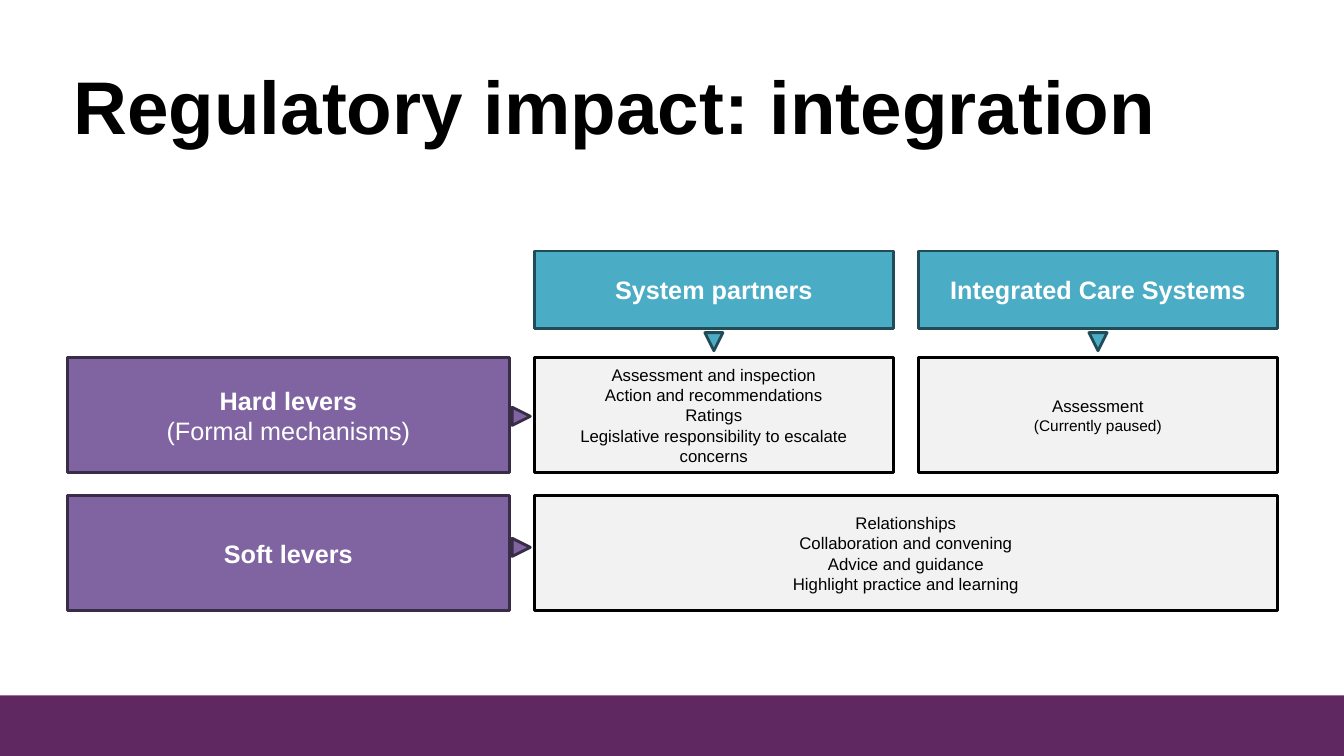
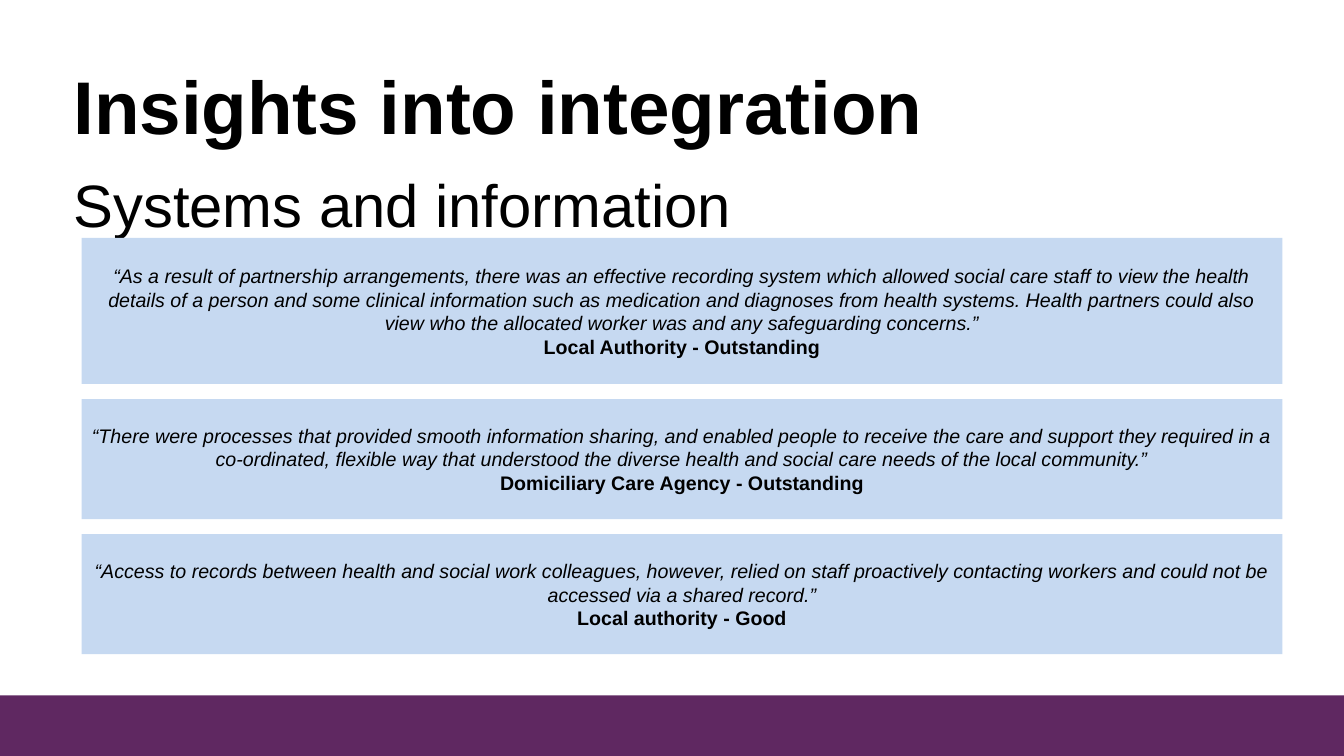
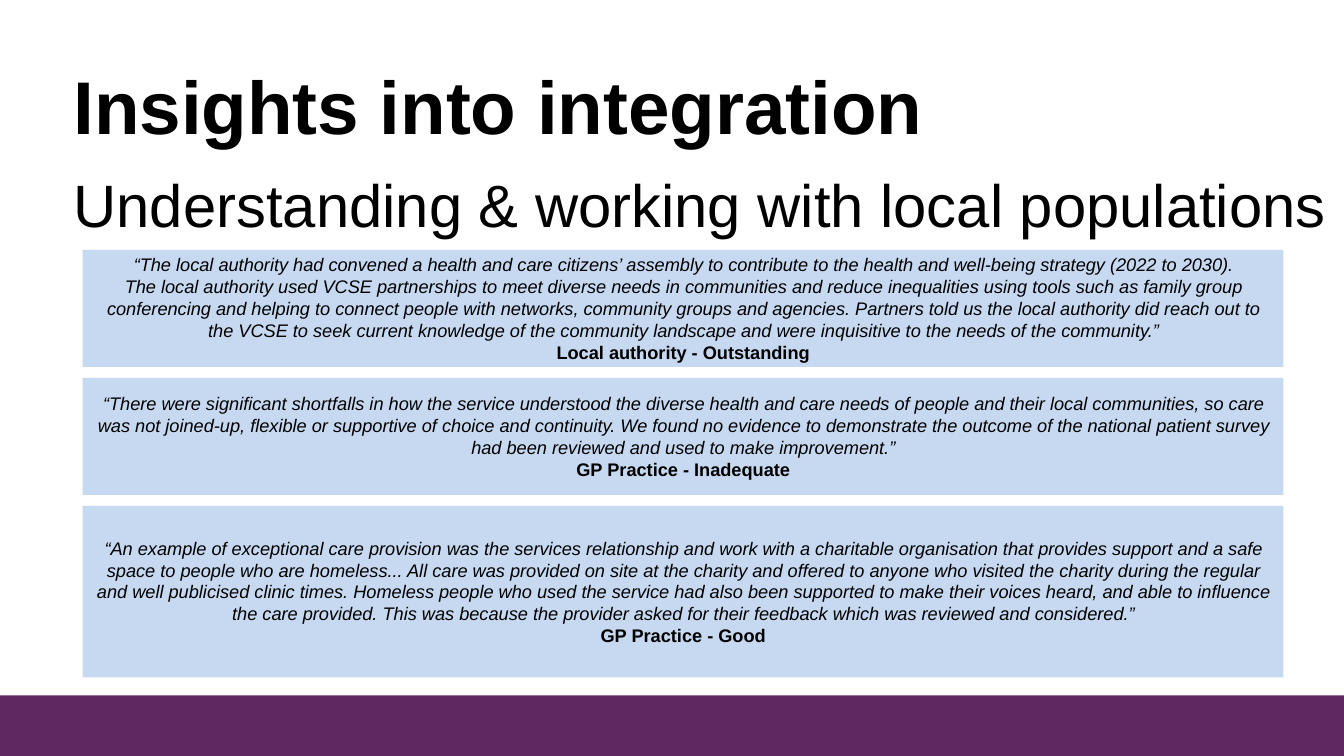
"""Build three slides on regulatory impact and insights into integration."""
from pptx import Presentation
from pptx.dml.color import RGBColor
from pptx.enum.shapes import MSO_SHAPE as Preset
from pptx.enum.text import MSO_ANCHOR as Anchor, PP_ALIGN as Align
from pptx.util import Inches, Pt

color = RGBColor.from_string
BAND, QUOTE, CELL = "5F2861", "C6D9F1", "F2F2F2"
PURPLE, PURPLE_LINE = "8064A2", "382C47"
TEAL, TEAL_LINE = "4BACC6", "214B57"
BLACK, WHITE = "000000", "FFFFFF"


def add_box(slide, left, top, width, height, fill, line=None, preset=Preset.RECTANGLE):
    shape = slide.shapes.add_shape(
        preset, Inches(left), Inches(top), Inches(width), Inches(height))
    shape.shadow.inherit = False
    shape.fill.solid()
    shape.fill.fore_color.rgb = color(fill)
    if line:
        shape.line.color.rgb = color(line)
        shape.line.width = Pt(2)
    else:
        shape.line.fill.background()
    shape.text_frame.word_wrap = True
    shape.text_frame.vertical_anchor = Anchor.MIDDLE
    return shape


def write(shape, text, size, ink=BLACK, bold=False, italic=False, align=Align.CENTER):
    frame = shape.text_frame
    for line in text.split("\n"):
        paragraph = frame.add_paragraph() if frame.text else frame.paragraphs[0]
        paragraph.alignment = align
        run = paragraph.add_run()
        run.text = line
        run.font.name = "Arial"
        run.font.size = Pt(size)
        run.font.bold = bold
        run.font.italic = italic
        run.font.color.rgb = color(ink)


presentation = Presentation()
presentation.slide_width = Inches(13.33)
presentation.slide_height = Inches(7.5)

headings = [
    ("Regulatory impact: integration", None),
    ("Insights into integration", "Systems and information"),
    ("Insights into integration", "Understanding & working with local populations"),
]
for title, subtitle in headings:
    slide = presentation.slides.add_slide(presentation.slide_layouts[6])
    add_box(slide, 0, 6.9, 13.33, 0.6, BAND)
    for text, top, height, size, bold in [(title, 0.59, 0.9, 53.3, True),
                                          (subtitle, 1.66, 0.7, 42.7, False)]:
        if text:
            heading = slide.shapes.add_textbox(
                Inches(0.73), Inches(top), Inches(12.6), Inches(height))
            frame = heading.text_frame
            frame.word_wrap = True
            frame.margin_left = frame.margin_right = 0
            frame.margin_top = frame.margin_bottom = 0
            write(heading, text, size, bold=bold, align=Align.LEFT)

impact_slide, *quote_slides = presentation.slides

label_left, label_width = 0.67, 4.38
column_width, column_gap = 3.56, 0.25
columns = [5.3, 5.3 + column_width + column_gap]
row_height = 1.14
rows = [3.55, 4.92]
pointer = 0.18

for left, text in zip(columns, ["System partners", "Integrated Care Systems"]):
    header = add_box(impact_slide, left, 2.49, column_width, 0.77, TEAL, TEAL_LINE)
    write(header, text, 18, WHITE, bold=True)
    arrow = add_box(impact_slide, left + (column_width - pointer) / 2, 3.3,
                    pointer, pointer, TEAL, TEAL_LINE, Preset.ISOSCELES_TRIANGLE)
    arrow.rotation = 180

levers = [("Hard levers", "(Formal mechanisms)", 4.04), ("Soft levers", None, 5.34)]
for top, (name, detail, arrow_top) in zip(rows, levers):
    lever = add_box(impact_slide, label_left, top, label_width, row_height,
                    PURPLE, PURPLE_LINE)
    write(lever, name, 18, WHITE, bold=True)
    if detail:
        write(lever, detail, 18, WHITE)
    arrow = add_box(impact_slide, 5.08, arrow_top, pointer, pointer,
                    PURPLE, PURPLE_LINE, Preset.ISOSCELES_TRIANGLE)
    arrow.rotation = 90

cells = [
    (columns[0], rows[0], column_width,
     "Assessment and inspection\nAction and recommendations\nRatings\n"
     "Legislative responsibility to escalate concerns", None),
    (columns[1], rows[0], column_width, "Assessment", "(Currently paused)"),
    (columns[0], rows[1], 2 * column_width + column_gap,
     "Relationships\nCollaboration and convening\nAdvice and guidance\n"
     "Highlight practice and learning", None),
]
for left, top, width, text, note in cells:
    cell = add_box(impact_slide, left, top, width, row_height, CELL, BLACK)
    write(cell, text, 12)
    if note:
        write(cell, note, 11)

systems_quotes = [
    (1.45, "“As a result of partnership arrangements, there was an effective recording "
     "system which allowed social care staff to view the health details of a person and "
     "some clinical information such as medication and diagnoses from health systems. "
     "Health partners could also view who the allocated worker was and any safeguarding "
     "concerns.”", "Local Authority - Outstanding"),
    (1.19, "“There were processes that provided smooth information sharing, and enabled "
     "people to receive the care and support they required in a co-ordinated, flexible "
     "way that understood the diverse health and social care needs of the local "
     "community.”", "Domiciliary Care Agency - Outstanding"),
    (1.19, "“Access to records between health and social work colleagues, however, relied "
     "on staff proactively contacting workers and could not be accessed via a shared "
     "record.”", "Local authority - Good"),
]
population_quotes = [
    (1.16, "“The local authority had convened a health and care citizens’ assembly to "
     "contribute to the health and well-being strategy (2022 to 2030).\n"
     "The local authority used VCSE partnerships to meet diverse needs in communities "
     "and reduce inequalities using tools such as family group conferencing and helping "
     "to connect people with networks, community groups and agencies. Partners told us "
     "the local authority did reach out to the VCSE to seek current knowledge of the "
     "community landscape and were inquisitive to the needs of the community.”",
     "Local authority - Outstanding"),
    (1.16, "“There were significant shortfalls in how the service understood the diverse "
     "health and care needs of people and their local communities, so care was not "
     "joined-up, flexible or supportive of choice and continuity. We found no evidence "
     "to demonstrate the outcome of the national patient survey had been reviewed and "
     "used to make improvement.”", "GP Practice - Inadequate"),
    (1.7, "“An example of exceptional care provision was the services relationship and "
     "work with a charitable organisation that provides support and a safe space to "
     "people who are homeless... All care was provided on site at the charity and "
     "offered to anyone who visited the charity during the regular and well publicised "
     "clinic times. Homeless people who used the service had also been supported to make "
     "their voices heard, and able to influence the care provided. This was because the "
     "provider asked for their feedback which was reviewed and considered.”",
     "GP Practice - Good"),
]
quote_layouts = [(systems_quotes, 0.81, 2.36, 0.15, 14),
                 (population_quotes, 0.82, 2.48, 0.11, 13)]
for slide, (quotes, left, top, gap, size) in zip(quote_slides, quote_layouts):
    for height, quote, provider in quotes:
        panel = add_box(slide, left, top, 11.91, height, QUOTE)
        write(panel, quote, size, italic=True)
        write(panel, provider, size, bold=True)
        top += height + gap

presentation.save("out.pptx")
